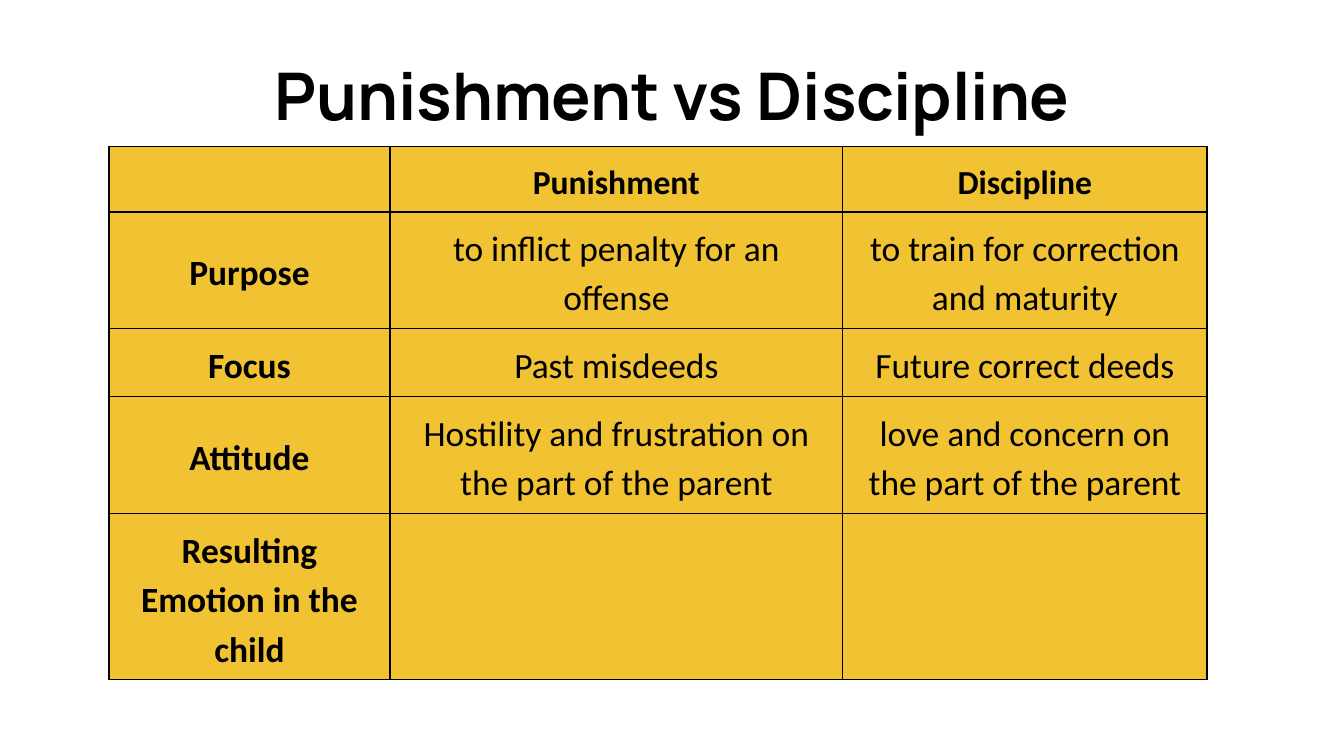
from lxml.etree import SubElement
from pptx import Presentation
from pptx.dml.color import RGBColor
from pptx.enum.text import MSO_ANCHOR as Anchor, PP_ALIGN as Align
from pptx.oxml.ns import qn
from pptx.util import Cm, Pt

BLACK, GOLD = "000000", "F1C232"


def color(value):
    return RGBColor.from_string(value)


def write(paragraph, text, line_spacing=None, **font_format):
    paragraph.text = text
    paragraph.alignment = Align.CENTER
    paragraph.line_spacing = line_spacing
    font = paragraph.runs[0].font
    font.color.rgb = color(BLACK)
    for name, value in font_format.items():
        setattr(font, name, value)


presentation = Presentation()
presentation.slide_width = Cm(25.4)
presentation.slide_height = Cm(14.29)
slide = presentation.slides.add_slide(presentation.slide_layouts[6])

# Title
title = slide.shapes.add_textbox(Cm(0.86), Cm(0.79), Cm(23.67), Cm(1.96))
title_frame = title.text_frame
frame_format = {"word_wrap": True, "vertical_anchor": Anchor.TOP}
for side in ("left", "right", "top", "bottom"):
    frame_format[f"margin_{side}"] = Cm(0.25)
for name, value in frame_format.items():
    setattr(title_frame, name, value)
write(title_frame.paragraphs[0], "Punishment vs Discipline",
      name="Manrope", size=Pt(35.2), bold=True)

# Comparison table
rows = [
    ("", "Punishment", "Discipline"),
    ("Purpose", "to inflict penalty for an offense", "to train for correction and maturity"),
    ("Focus", "Past misdeeds", "Future correct deeds"),
    ("Attitude", "Hostility and frustration on the part of the parent",
     "love and concern on the part of the parent"),
    ("Resulting Emotion in the child", "", ""),
]
column_widths = [5.31, 8.56, 6.88]
row_heights = [1.19, 1.93, 1.19, 1.93, 2.67]
table = slide.shapes.add_table(
    len(rows), len(column_widths), Cm(2.06), Cm(2.77),
    Cm(sum(column_widths)), Cm(sum(row_heights))).table
for column, width in zip(table.columns, column_widths):
    column.width = Cm(width)
for row, height in zip(table.rows, row_heights):
    row.height = Cm(height)

for row_index, texts in enumerate(rows):
    for column_index, text in enumerate(texts):
        cell = table.cell(row_index, column_index)
        for side in ("left", "right", "top", "bottom"):
            setattr(cell, f"margin_{side}", Cm(0.18))
        if text in ("Purpose", "Attitude"):
            cell.vertical_anchor = Anchor.MIDDLE
        if text:
            is_header = row_index == 0
            write(cell.text_frame.paragraphs[0], text, 1.15, name="Calibri",
                  size=Pt(18 if is_header else 19),
                  bold=is_header or column_index == 0)
        # Borders come before the fill in the cell properties
        properties = cell._tc.get_or_add_tcPr()
        for edge in ("lnL", "lnR", "lnT", "lnB"):
            line = SubElement(properties, qn(f"a:{edge}"), w=str(Pt(0.75)))
            solid_fill = SubElement(line, qn("a:solidFill"))
            SubElement(solid_fill, qn("a:srgbClr"), val=BLACK)
        cell.fill.solid()
        cell.fill.fore_color.rgb = color(GOLD)

presentation.save("out.pptx")
